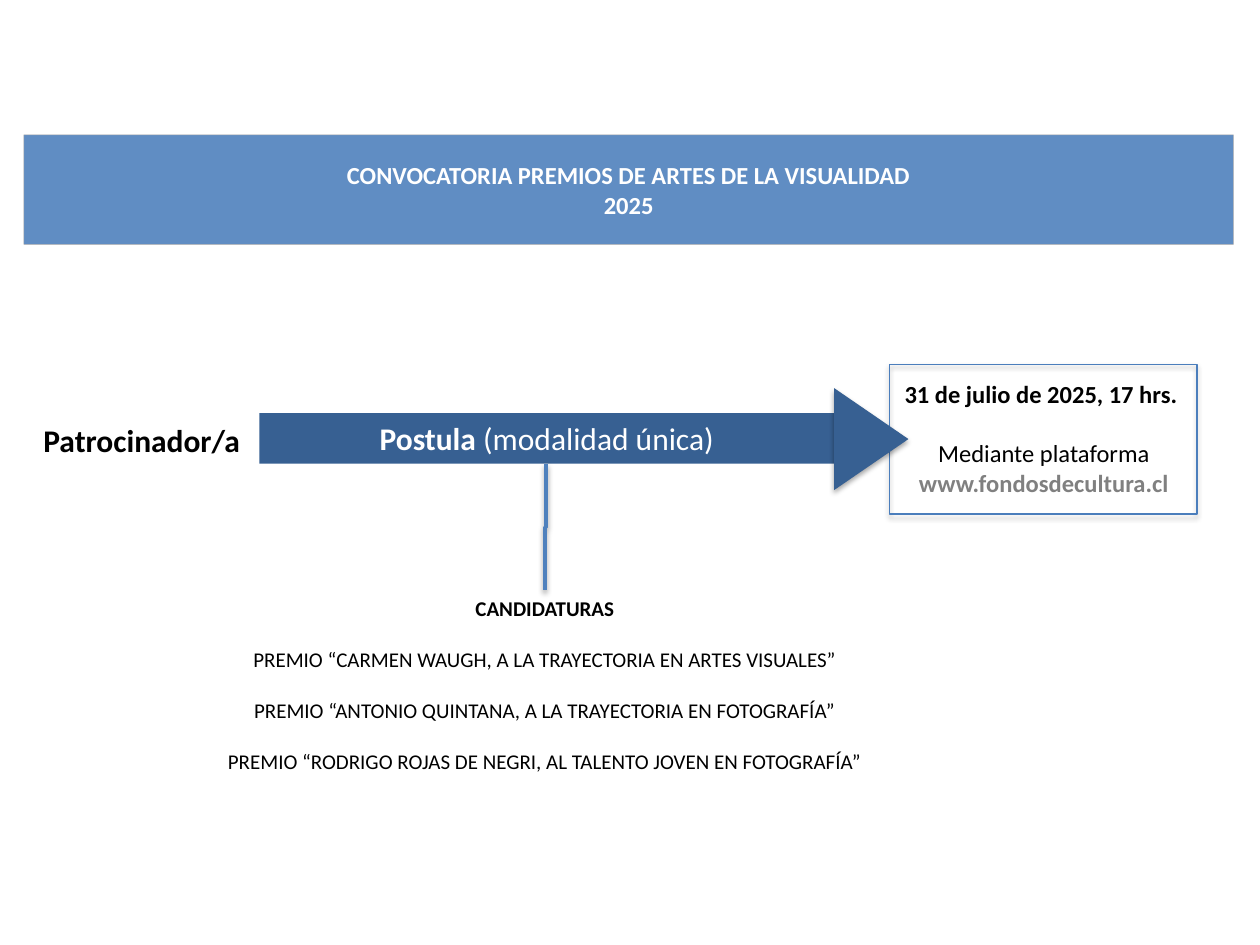
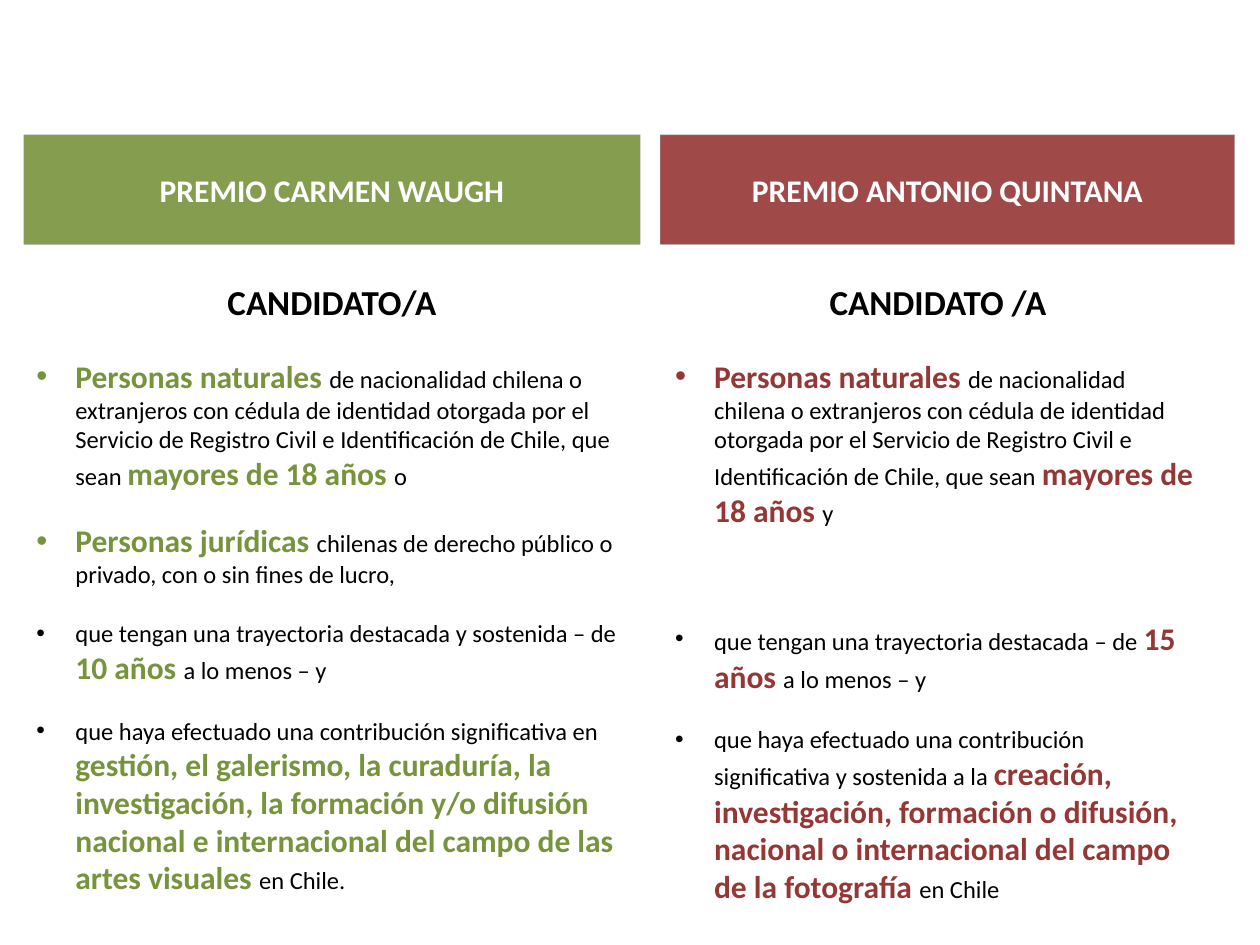
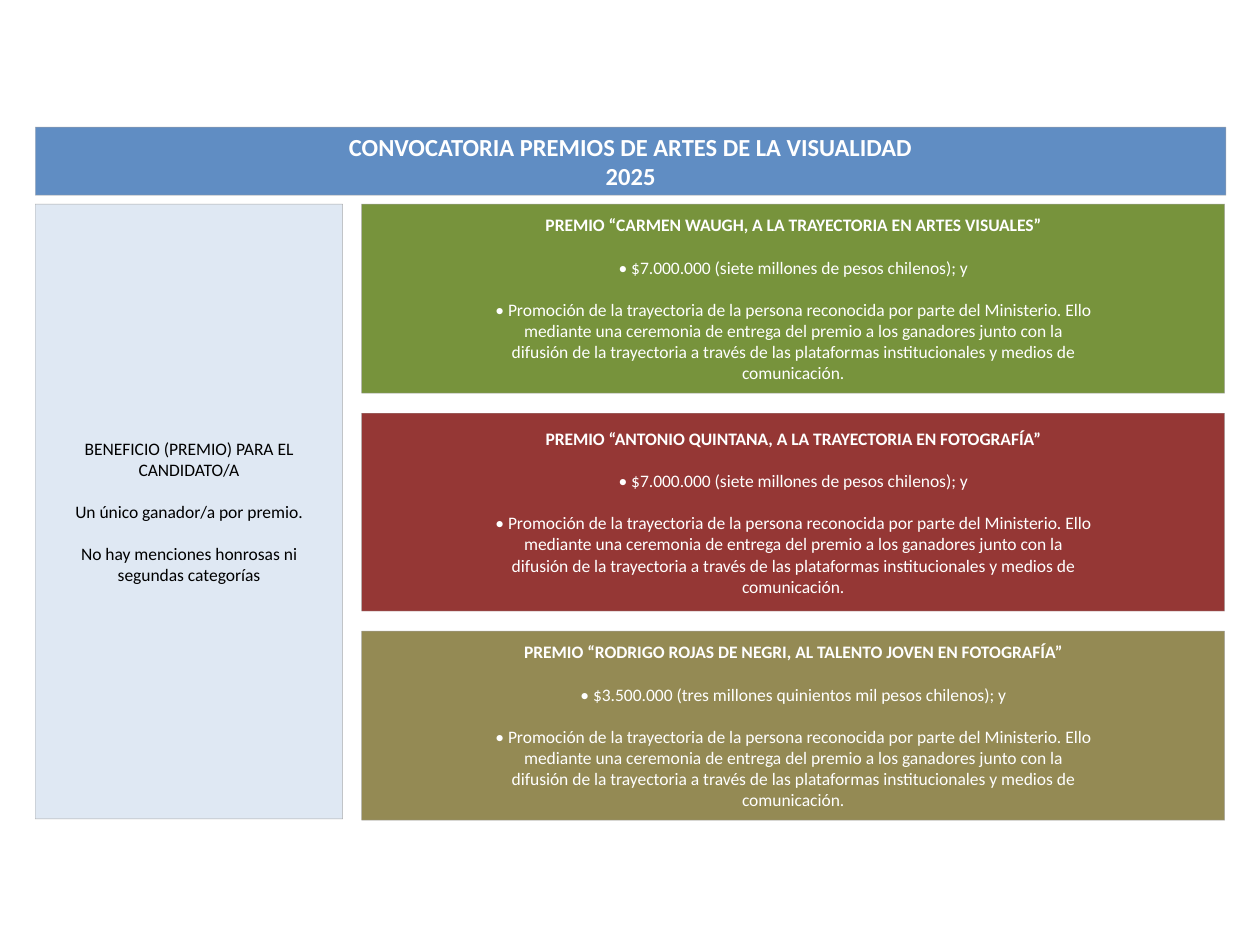
import pptx
import pptx.dml.color
import pptx.enum.shapes
import pptx.enum.text
import pptx.oxml
import pptx.oxml.ns
import pptx.util
from pptx.dml.color import RGBColor
from pptx.util import Inches

# Shared style
BLUE = RGBColor(0x4F, 0x81, 0xBD)
FRAME_BLUE = RGBColor(0x4B, 0x7E, 0xBC)
DARK_BLUE = RGBColor(0x37, 0x60, 0x92)
PALE_BLUE = RGBColor(0xDC, 0xE6, 0xF2)
GREEN = RGBColor(0x77, 0x93, 0x3C)
RED = RGBColor(0x95, 0x37, 0x35)
OLIVE = RGBColor(0x94, 0x8A, 0x54)
EDGE_GRAY = RGBColor(0xA6, 0xA6, 0xA6)
LINK_GRAY = RGBColor(0x80, 0x80, 0x80)
BLACK = RGBColor(0, 0, 0)
WHITE = RGBColor(255, 255, 255)
FONT = "Calibri"
LINE_HEIGHT = 1.22
BULLET_INDENT = 0.31

RECTANGLE = pptx.enum.shapes.MSO_SHAPE.RECTANGLE
TRIANGLE = pptx.enum.shapes.MSO_SHAPE.ISOSCELES_TRIANGLE
ELBOW = pptx.enum.shapes.MSO_CONNECTOR.ELBOW
TOP = pptx.enum.text.MSO_ANCHOR.TOP
MIDDLE = pptx.enum.text.MSO_ANCHOR.MIDDLE
CENTER = pptx.enum.text.PP_ALIGN.CENTER
LEFT = pptx.enum.text.PP_ALIGN.LEFT

# Wording used on more than one slide
CALL_TITLE = ["CONVOCATORIA PREMIOS DE ARTES DE LA VISUALIDAD", "2025"]
WAUGH = "PREMIO “CARMEN WAUGH, A LA TRAYECTORIA EN ARTES VISUALES”"
QUINTANA = "PREMIO “ANTONIO QUINTANA, A LA TRAYECTORIA EN FOTOGRAFÍA”"
ROJAS = "PREMIO “RODRIGO ROJAS DE NEGRI, AL TALENTO JOVEN EN FOTOGRAFÍA”"
PROMOTION = [
    "• Promoción de la trayectoria de la persona reconocida por parte del Ministerio. Ello",
    "mediante una ceremonia de entrega del premio a los ganadores junto con la",
    "difusión de la trayectoria a través de las plataformas institucionales y medios de",
    "comunicación.",
]
NATIONALITY = ("de nacionalidad chilena o extranjeros con cédula de identidad otorgada por el "
               "Servicio de Registro Civil e Identificación de Chile, que sean ")


# Text
def run(text, size, color=BLACK, bold=False):
    return text, size, color, bold


def para(*runs, gap=0, bullet=False):
    """A paragraph; gap is the space before it in points."""
    return runs, gap, bullet


def lines(size, lines_of_gap=1):
    return size * LINE_HEIGHT * lines_of_gap


def write(frame, paragraphs, anchor=TOP):
    frame.word_wrap = True
    frame.vertical_anchor = anchor
    for index, (runs, gap, bullet) in enumerate(paragraphs):
        paragraph = frame.paragraphs[0] if index == 0 else frame.add_paragraph()
        paragraph.alignment = LEFT if bullet else CENTER
        if gap:
            paragraph.space_before = pptx.util.Pt(round(gap, 1))
        if bullet:
            add_bullet(paragraph)
        for text, size, color, bold in runs:
            piece = paragraph.add_run()
            piece.text = text
            piece.font.name = FONT
            piece.font.size = pptx.util.Pt(size)
            piece.font.bold = bold
            piece.font.color.rgb = color


def add_bullet(paragraph):
    properties = paragraph._p.get_or_add_pPr()
    properties.set("marL", str(Inches(BULLET_INDENT)))
    properties.set("indent", str(-Inches(BULLET_INDENT)))
    for tag, key, value in (("buFont", "typeface", "Arial"), ("buChar", "char", "•")):
        mark = pptx.oxml.ns.qn("a:" + tag)
        properties.makeelement(mark, {})
        element = pptx.oxml.parse_xml(f'<a:{tag} {pptx.oxml.ns.nsdecls("a")} {key}="{value}"/>')
        properties.append(element)


def add_label(slide, left, top, width, height, paragraphs):
    label = slide.shapes.add_textbox(*map(Inches, (left, top, width, height)))
    write(label.text_frame, paragraphs)


# Shapes
def make_translucent(shape_part, opacity=90):
    for color in shape_part.iter(pptx.oxml.ns.qn("a:srgbClr")):
        color.append(pptx.oxml.parse_xml(
            f'<a:alpha {pptx.oxml.ns.nsdecls("a")} val="{opacity * 1000}"/>'))


def add_shadow(properties, opacity, blur, distance):
    for effects in properties.findall(pptx.oxml.ns.qn("a:effectLst")):
        properties.remove(effects)
    emu = pptx.util.Pt
    properties.append(pptx.oxml.parse_xml(
        f'<a:effectLst {pptx.oxml.ns.nsdecls("a")}>'
        f'<a:outerShdw blurRad="{emu(blur)}" dist="{emu(distance)}" dir="5400000" rotWithShape="0">'
        f'<a:srgbClr val="000000"><a:alpha val="{opacity * 1000}"/></a:srgbClr>'
        '</a:outerShdw></a:effectLst>'))


def add_block(slide, left, top, width, height, fill=None, edge=None, edge_width=0.25,
              kind=RECTANGLE):
    block = slide.shapes.add_shape(kind, *map(Inches, (left, top, width, height)))
    block.shadow.inherit = False
    if fill is None:
        block.fill.background()
    else:
        block.fill.solid()
        block.fill.fore_color.rgb = fill
    if edge is None:
        block.line.fill.background()
    else:
        block.line.color.rgb = edge
        block.line.width = pptx.util.Pt(edge_width)
    return block


def add_panel(slide, left, top, width, height, fill, paragraphs, opaque=False):
    """A thin-edged panel with its text centred both ways."""
    panel = add_block(slide, left, top, width, height, fill, EDGE_GRAY)
    properties = panel._element.spPr
    make_translucent(properties.find(pptx.oxml.ns.qn("a:ln")) if opaque else properties)
    write(panel.text_frame, paragraphs, MIDDLE)


def add_call_band(slide, left, top, width, height):
    add_panel(slide, left, top, width, height, BLUE,
              [para(run(text, 14, WHITE, True)) for text in CALL_TITLE])


def add_branch(slide, left, top, length, offset):
    """An elbow line turned a quarter so that it runs downwards."""
    branch = slide.shapes.add_connector(
        ELBOW, *map(Inches, (left, top, left + length, top + offset)))
    branch.line.color.rgb = BLUE
    branch.line.width = pptx.util.Pt(2)
    properties = branch._element.spPr
    properties.xfrm.set("rot", "5400000")
    add_shadow(properties, 38, 3.1, 1.6)


# Slides
def build_application(slide):
    deadline_frame = add_block(slide, 7.06, 2.89, 2.44, 1.19, edge=FRAME_BLUE, edge_width=0.75)
    add_shadow(deadline_frame._element.spPr, 35, 3.1, 1.8)
    add_call_band(slide, 0.19, 1.07, 9.6, 0.87)

    add_label(slide, 0.19, 3.29, 1.87, 0.4, [para(run("Patrocinador/a", 18, bold=True))])
    arrow_shaft = add_block(slide, 2.06, 3.28, 4.56, 0.4, DARK_BLUE)
    write(arrow_shaft.text_frame, [para(run("Postula ", 18, WHITE, True),
                                        run("(modalidad única)", 18, WHITE))])
    arrow_tip = add_block(slide, 6.51, 3.19, 0.81, 0.59, DARK_BLUE, kind=TRIANGLE)
    arrow_tip.rotation = 90
    add_shadow(arrow_tip._element.spPr, 35, 3.1, 1.8)

    add_label(slide, 6.77, 2.96, 3.03, 1.04, [
        para(run("31 de julio de 2025, 17 hrs. ", 14, bold=True)),
        para(run("Mediante plataforma ", 14),
             run("www.fondosdecultura.cl", 14, LINK_GRAY, True), gap=lines(14)),
    ])
    add_label(slide, 1.61, 4.68, 5.43, 1.51,
              [para(run("CANDIDATURAS", 12, bold=True))]
              + [para(run(award, 12), gap=lines(12)) for award in (WAUGH, QUINTANA, ROJAS)])
    add_branch(slide, 3.83, 4.18, 1, 0.01)


def add_requirements(slide, left, top, width, height, heading, accent, requirements):
    """Bulleted requirements; strings alternate between plain and *accented*."""
    paragraphs = [para(run(heading, 20, bold=True))]
    for gap, parts in requirements:
        runs = [run(part[1:], 18, accent, True) if part.startswith("*") else run(part, 14)
                for part in parts]
        paragraphs.append(para(*runs, gap=gap, bullet=True))
    add_label(slide, left, top, width, height, paragraphs)


def build_candidates(slide):
    for left, width, color, award in ((0.19, 4.89, GREEN, "PREMIO CARMEN WAUGH"),
                                      (5.24, 4.56, RED, "PREMIO ANTONIO QUINTANA")):
        add_panel(slide, left, 1.07, width, 0.87, color, [para(run(award, 18, WHITE, True))])

    add_requirements(slide, 0.19, 2.18, 4.89, 5.02, "CANDIDATO/A", GREEN, [
        (lines(16), ["*Personas naturales ", NATIONALITY, "*mayores de 18 años ", "o"]),
        (lines(14), ["*Personas jurídicas ",
                     "chilenas de derecho público o privado, con o sin fines de lucro,"]),
        (lines(14), ["que tengan una trayectoria destacada y sostenida – de ", "*10 años ",
                     "a lo menos – y"]),
        (lines(14), ["que haya efectuado una contribución significativa en ",
                     "*gestión, el galerismo, la curaduría, la investigación, la formación y/o "
                     "difusión nacional e internacional del campo de las artes visuales ",
                     "en Chile."]),
    ])
    add_requirements(slide, 5.26, 2.18, 4.37, 5.08, "CANDIDATO /A", RED, [
        (lines(16), ["*Personas naturales ", NATIONALITY, "*mayores de 18 años ", "y"]),
        (lines(14, 3), ["que tengan una trayectoria destacada – de ", "*15 años ",
                        "a lo menos – y"]),
        (lines(14), ["que haya efectuado una contribución significativa y sostenida a la ",
                     "*creación, investigación, formación o difusión, nacional o internacional "
                     "del campo de la fotografía ", "en Chile"]),
    ])


def build_benefits(slide):
    benefit = ["BENEFICIO (PREMIO) PARA EL CANDIDATO/A", "Un único ganador/a por premio.",
               "No hay menciones honrosas ni segundas categorías"]
    add_panel(slide, 0.28, 1.62, 2.44, 4.88, PALE_BLUE,
              [para(run(text, 10), gap=lines(10) if index else 0)
               for index, text in enumerate(benefit)])
    add_call_band(slide, 0.28, 1.01, 9.45, 0.54)

    seven_million = "• $7.000.000 (siete millones de pesos chilenos); y"
    awards = [
        (WAUGH, seven_million, GREEN, 1.5),
        (QUINTANA, seven_million, RED, 1.57),
        (ROJAS, "• $3.500.000 (tres millones quinientos mil pesos chilenos); y", OLIVE, 1.5),
    ]
    top = 1.62
    for award, amount, color, height in awards:
        paragraphs = [para(run(award, 10, WHITE, True)),
                      para(run(amount, 10, WHITE), gap=lines(10))]
        paragraphs += [para(run(text, 10, WHITE), gap=0 if index else lines(10))
                       for index, text in enumerate(PROMOTION)]
        add_panel(slide, 2.87, top, 6.85, height, color, paragraphs, opaque=True)
        top += height + 0.16


def main():
    deck = pptx.Presentation()
    deck.slide_width, deck.slide_height = Inches(10), Inches(7.5)
    for build in (build_application, build_candidates, build_benefits):
        build(deck.slides.add_slide(deck.slide_layouts[6]))
    deck.save("out.pptx")


if __name__ == "__main__":
    main()
